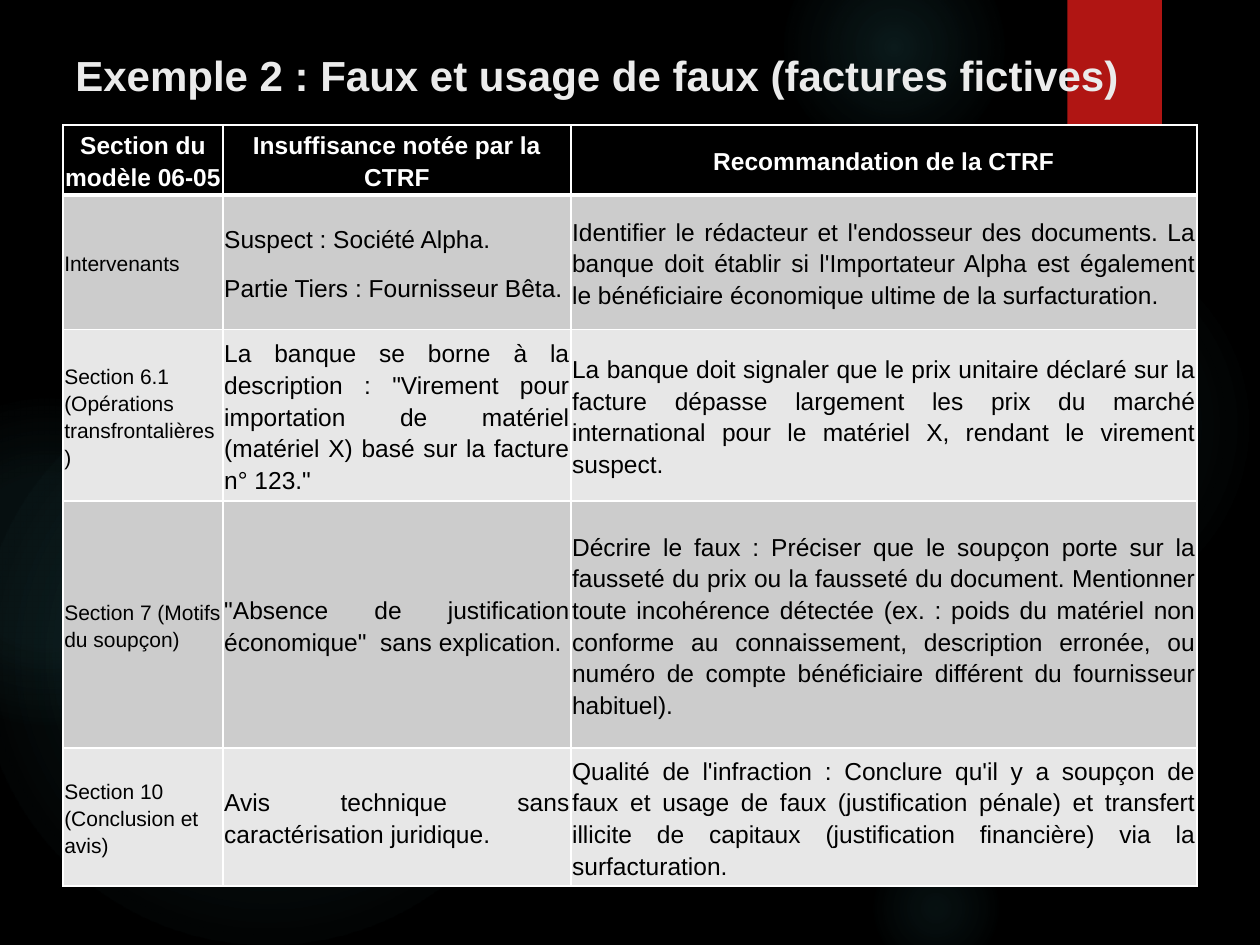
"""Build the slide on false invoices: a title and a table of shortcomings and recommendations."""
from lxml.etree import SubElement
from pptx import Presentation
from pptx.dml.color import RGBColor
from pptx.enum.shapes import MSO_SHAPE
from pptx.enum.text import MSO_ANCHOR, PP_ALIGN
from pptx.oxml.ns import qn
from pptx.util import Pt

COLORS = {
    "background": "000000", "glow": "50B9C1", "ribbon": "B01513", "title": "EBEBEB",
    "header": "000000", "header_text": "FFFFFF", "body_text": "000000",
    "odd_row": "CCCCCC", "even_row": "E7E7E7", "border": "FFFFFF",
}
FONT = "Arial"
TITLE = "Exemple 2 : Faux et usage de faux (factures fictives)"
GLOWS = [
    (496, 132, 222, [(0, 7), (36, 6), (69, 0)]),
    (448, -36, 126, [(0, 14), (36, 7), (73, 0)]),
    (496, 480, 78, [(0, 9), (36, 5), (66, 0)]),
    (-12, 210, 330, [(0, 11), (36, 10), (75, 0)]),
    (-66, 228, 186, [(0, 8), (36, 8), (72, 0)]),
]
COLUMN_WIDTHS = [91.4, 198.8, 357.8]
ROW_HEIGHTS = [36.7, 77, 88.6, 141.1, 70.6]
ROWS = [
    ("Section du modèle 06-05", "Insuffisance notée par la CTRF", "Recommandation de la CTRF"),
    ("Intervenants",
     "Suspect : Société Alpha.\nPartie Tiers : Fournisseur Bêta.",
     "Identifier le rédacteur et l'endosseur des documents. La banque doit établir si "
     "l'Importateur Alpha est également le bénéficiaire économique ultime de la surfacturation."),
    ("Section 6.1 (Opérations transfrontalières)",
     'La banque se borne à la description : "Virement pour importation de matériel '
     '(matériel X) basé sur la facture n° 123."',
     "La banque doit signaler que le prix unitaire déclaré sur la facture dépasse largement "
     "les prix du marché international pour le matériel X, rendant le virement suspect."),
    ("Section 7 (Motifs du soupçon)",
     '"Absence de justification économique"  sans explication.',
     "Décrire le faux : Préciser que le soupçon porte sur la fausseté du prix ou la fausseté "
     "du document. Mentionner toute incohérence détectée (ex. : poids du matériel non conforme "
     "au connaissement, description erronée, ou numéro de compte bénéficiaire différent du "
     "fournisseur habituel)."),
    ("Section 10 (Conclusion et avis)",
     "Avis technique sans caractérisation juridique.",
     "Qualité de l'infraction : Conclure qu'il y a soupçon de faux et usage de faux "
     "(justification pénale) et transfert illicite de capitaux (justification financière) "
     "via la surfacturation."),
]


def paint(fill, name):
    fill.solid()
    fill.fore_color.rgb = RGBColor.from_string(COLORS[name])


def style_font(font, size, color, bold):
    font.name, font.size, font.bold = FONT, Pt(size), bold
    font.color.rgb = RGBColor.from_string(COLORS[color])


def add_plain_shape(page, kind, left, top, width, height):
    shape = page.shapes.add_shape(kind, Pt(left), Pt(top), Pt(width), Pt(height))
    shape.shadow.inherit = False
    shape.line.fill.background()
    return shape


def add_glow(page, left, top, size, stops):
    glow = add_plain_shape(page, MSO_SHAPE.OVAL, left, top, size, size)
    glow.fill.gradient()
    gradient = glow.element.spPr.find(qn("a:gradFill"))
    for child in list(gradient):
        gradient.remove(child)
    stop_list = SubElement(gradient, qn("a:gsLst"))
    for position, opacity in stops:
        stop = SubElement(stop_list, qn("a:gs"), pos=str(position * 1000))
        color = SubElement(stop, qn("a:srgbClr"), val=COLORS["glow"])
        SubElement(color, qn("a:alpha"), val=str(opacity * 1000))
    circle = SubElement(gradient, qn("a:path"), path="circle")
    SubElement(circle, qn("a:fillToRect"), l="50000", t="50000", r="50000", b="50000")


def add_borders(cell, top, bottom):
    properties = cell._tc.get_or_add_tcPr()
    for side, width in (("L", 1), ("R", 1), ("T", top), ("B", bottom)):
        line = SubElement(properties, qn(f"a:ln{side}"), w=str(Pt(width)))
        solid = SubElement(line, qn("a:solidFill"))
        SubElement(solid, qn("a:srgbClr"), val=COLORS["border"])


def fill_cell(cell, text, row, column):
    header = row == 0
    add_borders(cell, 3 if row == 1 else 1, 3 if header else 1)
    paint(cell.fill, "header" if header else "odd_row" if row % 2 else "even_row")
    cell.vertical_anchor = MSO_ANCHOR.MIDDLE
    cell.margin_left = cell.margin_right = cell.margin_top = cell.margin_bottom = Pt(0.75)
    cell.text = text
    for paragraph in cell.text_frame.paragraphs:
        if header:
            paragraph.alignment = PP_ALIGN.CENTER
        else:
            paragraph.alignment = PP_ALIGN.JUSTIFY if column else PP_ALIGN.LEFT
        paragraph.line_spacing = 1.15
        paragraph.space_after = Pt(10)
        size = 14 if header or column else 12
        style_font(paragraph.font, size, "header_text" if header else "body_text", header)


def add_title(page):
    box = page.shapes.add_textbox(Pt(36), Pt(21.6), Pt(648), Pt(49.7))
    frame = box.text_frame
    frame.word_wrap = True
    frame.margin_top = Pt(6.5)
    frame.text = TITLE
    style_font(frame.paragraphs[0].font, 24, "title", True)


def add_section_table(page):
    table = page.shapes.add_table(len(ROWS), len(COLUMN_WIDTHS), Pt(36), Pt(71.3),
                                  Pt(sum(COLUMN_WIDTHS)), Pt(sum(ROW_HEIGHTS))).table
    table.horz_banding = False
    for column, width in zip(table.columns, COLUMN_WIDTHS):
        column.width = Pt(width)
    for row, height in zip(table.rows, ROW_HEIGHTS):
        row.height = Pt(height)
    for row, texts in enumerate(ROWS):
        for column, text in enumerate(texts):
            fill_cell(table.cell(row, column), text, row, column)


def main():
    deck = Presentation()
    deck.slide_width, deck.slide_height = Pt(720), Pt(540)
    page = deck.slides.add_slide(deck.slide_layouts[6])
    paint(page.background.fill, "background")
    for glow in GLOWS:
        add_glow(page, *glow)
    ribbon = add_plain_shape(page, MSO_SHAPE.RECTANGLE, 610, 0, 54, 86.4)
    paint(ribbon.fill, "ribbon")
    add_title(page)
    add_section_table(page)
    deck.save("out.pptx")


if __name__ == "__main__":
    main()
